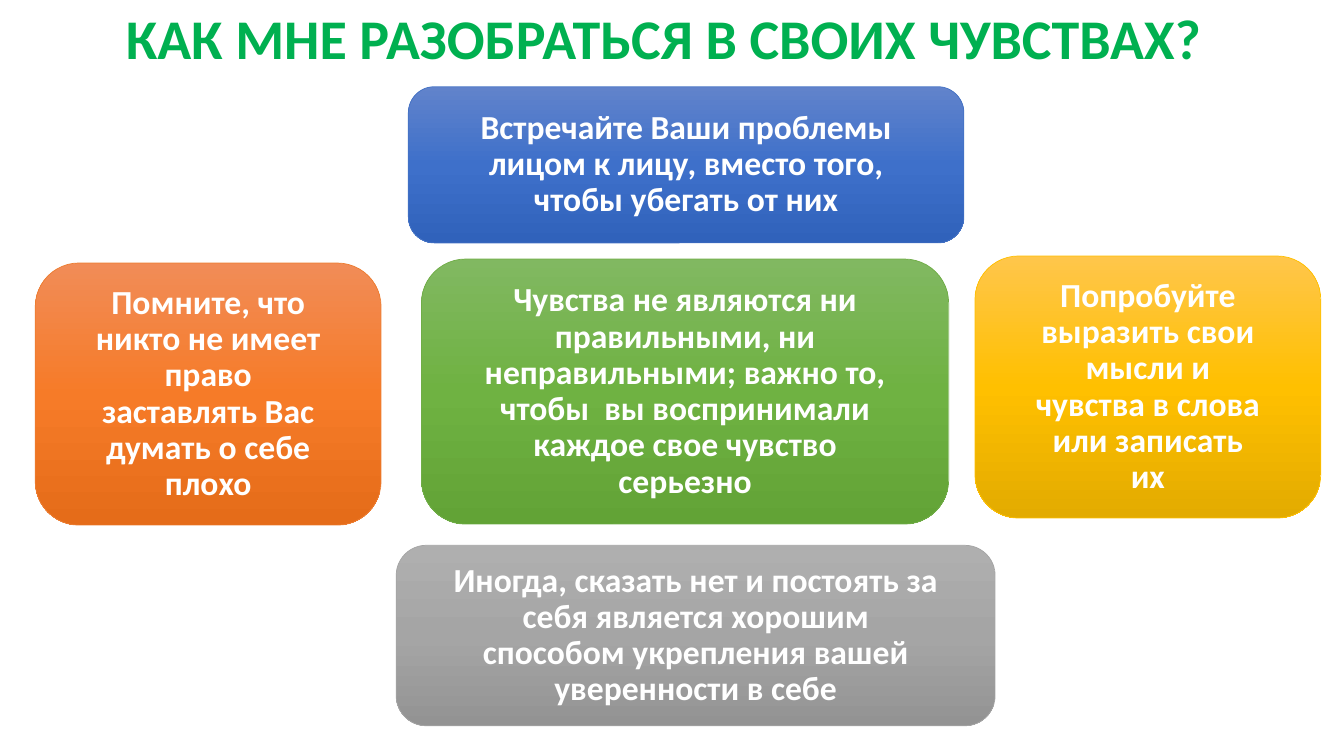
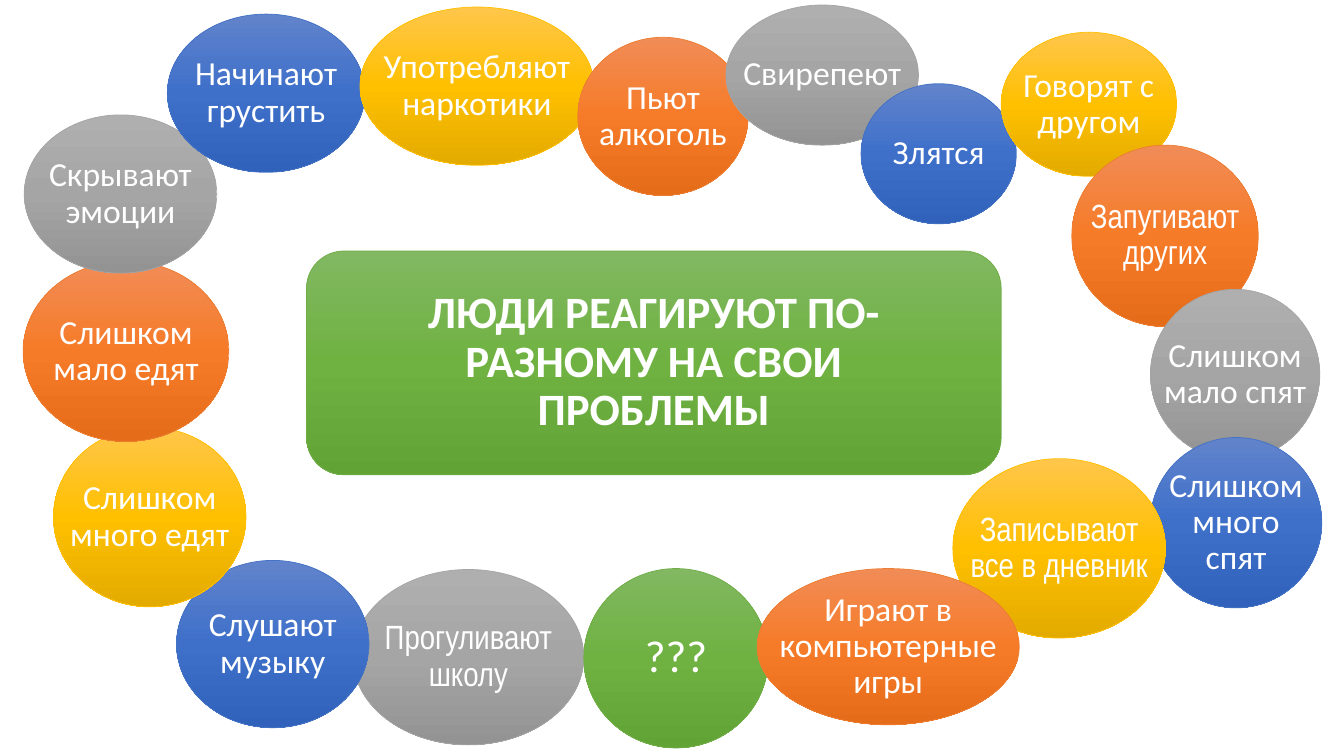
from copy import deepcopy

from pptx import Presentation
from pptx.dml.color import RGBColor
from pptx.enum.shapes import MSO_SHAPE as SHAPE
from pptx.enum.text import MSO_ANCHOR as ANCHOR, PP_ALIGN as ALIGN
from pptx.oxml.ns import qn
from pptx.util import Emu, Pt

PX = 9144

WHITE = RGBColor(0xFF, 0xFF, 0xFF)
TITLE_GREEN = RGBColor(0x00, 0xB0, 0x50)


def shades(*codes):
    return [RGBColor.from_string(code) for code in codes]


BLUE = shades("4472C4", "6183CB", "3E70CA", "3062BB")
ORANGE = shades("ED7D31", "F18C57", "F67B28", "E56C19")
GRAY = shades("A5A5A5", "AFAFAF", "A5A5A5", "939393")
YELLOW = shades("FFC000", "FFC64B", "FFC000", "E3AB00")
GREEN = shades("70AD47", "81B861", "6FB242", "62A336")

ADVICE = [
    (418, 257, 523, 263, GREEN, "Чувства не являются ни правильными, ни неправильными; "
     "важно то, чтобы  вы воспринимали каждое свое чувство серьезно"),
    (405, 86, 551, 155, BLUE, "Встречайте Ваши проблемы лицом к лицу, вместо того, "
     "чтобы убегать от них"),
    (967, 254, 343, 260, YELLOW, "Попробуйте выразить свои мысли и чувства в слова "
     "или записать их"),
    (393, 541, 594, 179, GRAY, "Иногда, сказать нет и постоять за себя является хорошим "
     "способом укрепления вашей уверенности в себе"),
    (35, 261, 343, 260, ORANGE, "Помните, что никто не имеет право заставлять Вас "
     "думать о себе плохо"),
]

NARROW = {"font": "Arial Narrow"}
REACTIONS = [
    (350, 565, 229, 174, GRAY, "Прогуливают\vшколу", NARROW),
    (175, 556, 191, 166, BLUE, "Слушают\vмузыку", {}),
    (53, 424, 191, 178, YELLOW, "Слишком\vмного едят", {}),
    (23, 259, 204, 179, ORANGE, "Слишком\vмало едят", {}),
    (24, 114, 191, 157, GRAY, "Скрывают\vэмоции", {}),
    (166, 14, 196, 157, BLUE, "Начинают\vгрустить", {}),
    (579, 564, 183, 178, GREEN, "???", {"size": 32}),
    (357, 7, 232, 157, YELLOW, "Употребляют\vнаркотики", {}),
    (573, 37, 169, 157, ORANGE, "Пьют\vалкоголь", {}),
    (720, 5, 191, 139, GRAY, "Свирепеют", {}),
    (854, 83, 154, 139, BLUE, "Злятся", {}),
    (993, 32, 174, 143, YELLOW, "Говорят с\vдругом", {}),
    (1063, 144, 185, 180, ORANGE, "Запугивают\vдругих", NARROW),
    (1141, 287, 168, 169, GRAY, "Слишком\vмало спят", {}),
    (1141, 434, 170, 169, BLUE, "Слишком\vмного\vспят", {}),
    (945, 455, 211, 178, YELLOW, "Записывают\vвсе в дневник", NARROW),
    (751, 564, 260, 155, ORANGE, "Играют в\vкомпьютерные\vигры", {}),
]


class Deck:
    def __init__(self, width, height):
        self.prs = Presentation()
        self.prs.slide_width = Emu(width * PX)
        self.prs.slide_height = Emu(height * PX)
        self.s = None

    def slide(self):
        self.s = self.prs.slides.add_slide(self.prs.slide_layouts[6])

    def label(self, sp, text, size, color=WHITE, bold=False, font="Calibri",
              wrap=True, margins=(10, 5)):
        tf = sp.text_frame
        tf.word_wrap = wrap
        tf.vertical_anchor = ANCHOR.MIDDLE
        tf.margin_left = tf.margin_right = Emu(margins[0] * PX)
        tf.margin_top = tf.margin_bottom = Emu(margins[1] * PX)
        p = tf.paragraphs[0]
        p.text = text
        p.alignment = ALIGN.CENTER
        p.line_spacing = 0.9
        p.font.name = font
        p.font.size = Pt(size)
        p.font.bold = bold
        p.font.color.rgb = color

    def title(self, x, y, w, h, text):
        sp = self.s.shapes.add_textbox(*(Emu(v * PX) for v in (x, y, w, h)))
        self.label(sp, text, 40, TITLE_GREEN, True)

    def shape(self, kind, x, y, w, h, palette):
        sp = self.s.shapes.add_shape(kind, *(Emu(v * PX) for v in (x, y, w, h)))
        sp.shadow.inherit = False
        line, *colors = palette
        sp.line.color.rgb = line
        sp.line.width = Pt(0.5)
        sp.fill.gradient()
        sp.fill.gradient_angle = 270
        stops = sp._element.spPr.find(qn("a:gradFill")).find(qn("a:gsLst"))
        stops.append(deepcopy(stops[0]))
        for i, (stop, color) in enumerate(zip(sp.fill.gradient_stops, colors)):
            stop.position = i / 2
            stop.color.rgb = color
        return sp

    def box(self, x, y, w, h, palette, text, size=24, margins=(45, 29)):
        sp = self.shape(SHAPE.ROUNDED_RECTANGLE, x, y, w, h, palette)
        self.label(sp, text, size, bold=True, margins=margins)

    def bubble(self, x, y, w, h, palette, text, size=24, font="Calibri"):
        sp = self.shape(SHAPE.OVAL, x, y, w, h, palette)
        self.label(sp, text, size, font=font, wrap=False, margins=(0, 0))


def main():
    deck = Deck(1333, 750)

    deck.slide()
    deck.title(67, 6, 1182, 71, "КАК МНЕ РАЗОБРАТЬСЯ В СВОИХ ЧУВСТВАХ?")
    for advice in ADVICE:
        deck.box(*advice)

    deck.slide()
    deck.box(304, 249, 689, 222, GREEN, "ЛЮДИ РЕАГИРУЮТ ПО-РАЗНОМУ НА СВОИ ПРОБЛЕМЫ",
             size=32, margins=(29, 14))
    for *reaction, style in REACTIONS:
        deck.bubble(*reaction, **style)

    deck.prs.save("out.pptx")


if __name__ == "__main__":
    main()
